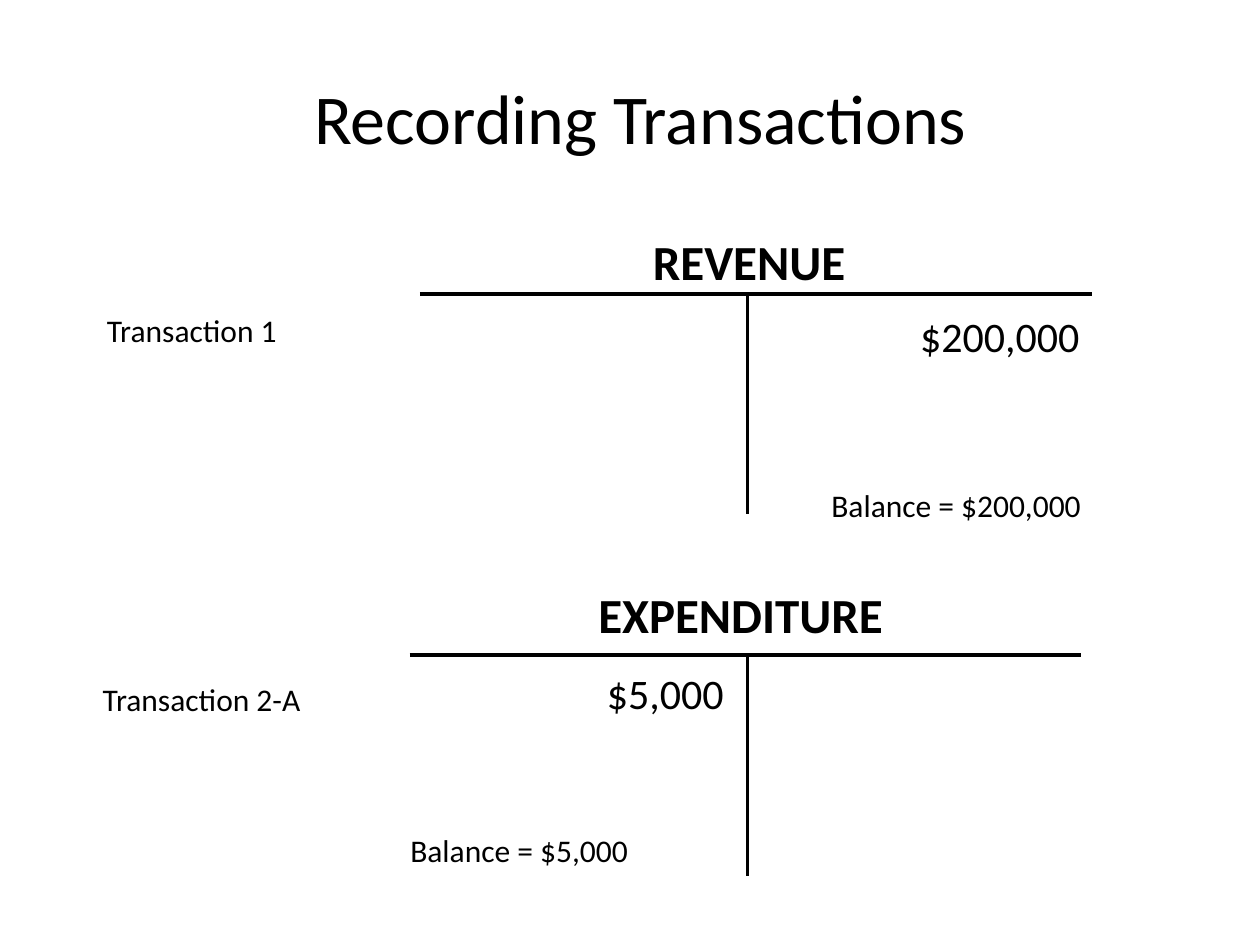
from lxml import etree
from pptx import Presentation
from pptx.dml.color import RGBColor
from pptx.oxml.ns import qn
from pptx.util import Inches, Pt
from pptx.enum import shapes, text

COLORS = {"ink": "000000", "paper": "FFFFFF"}
INK = RGBColor.from_string(COLORS["ink"])
FONT = "Calibri"
LEFT, CENTER, RIGHT = text.PP_ALIGN.LEFT, text.PP_ALIGN.CENTER, text.PP_ALIGN.RIGHT

prs = Presentation()
prs.slide_width, prs.slide_height = Inches(10), Inches(7.5)
COL, ROW = prs.slide_width / 120, prs.slide_height / 90
STEM_COL, STEM_ROWS = 71.2, 21
TEXT_ROWS = {28: 6.8, 24: 6, 18: 4.8}

s = prs.slides.add_slide(prs.slide_layouts[5])
s.background.fill.solid()
s.background.fill.fore_color.rgb = RGBColor.from_string(COLORS["paper"])


def write(sp, words, size, align=LEFT, bold=False):
    tf = sp.text_frame
    tf.word_wrap = True
    p = tf.paragraphs[0]
    p.text = words
    p.alignment = align
    p.font.name, p.font.size, p.font.bold = FONT, Pt(size), bold
    p.font.color.rgb = INK


def rule(x1, y1, x2, y2):
    line = s.shapes.add_connector(
        shapes.MSO_CONNECTOR.STRAIGHT,
        round(x1 * COL), round(y1 * ROW), round(x2 * COL), round(y2 * ROW))
    line.line.color.rgb = INK
    line.line.width = Pt(2)
    etree.SubElement(line._element.spPr, qn("a:effectLst"))


title = s.shapes.title
title.left, title.top = round(7 * COL), round(3.6 * ROW)
title.width, title.height = round(108 * COL), round(15 * ROW)
title.text_frame.vertical_anchor = text.MSO_ANCHOR.MIDDLE
write(title, "Recording Transactions", 40, CENTER)

accounts = [
    (39, 103, 62.4, [
        ("EXPENDITURE", 55.8, 55.1, 30.2, 28, LEFT),
        ("$5,000", 42.6, 63, 27.5, 24, RIGHT),
        ("Transaction 2-A", 8.6, 64.2, 31, 18, LEFT),
        ("Balance = $5,000", 37.9, 78.6, 31, 18, LEFT),
    ]),
    (40, 104, 28, [
        ("REVENUE", 61, 21.5, 22, 28, LEFT),
        ("Transaction 1", 9, 29, 31, 18, LEFT),
        ("$200,000", 76.5, 29, 27.5, 24, RIGHT),
        ("Balance = $200,000", 78, 45.7, 31, 18, LEFT),
    ]),
]

for start, end, top, entries in accounts:
    rule(start, top, end, top)
    rule(STEM_COL, top, STEM_COL, top + STEM_ROWS)
    for words, x, y, width, size, align in entries:
        sp = s.shapes.add_textbox(round(x * COL), round(y * ROW),
                                  round(width * COL), round(TEXT_ROWS[size] * ROW))
        sp.text_frame.auto_size = text.MSO_AUTO_SIZE.SHAPE_TO_FIT_TEXT
        write(sp, words, size, align, bold=size == 28)

prs.save("out.pptx")
